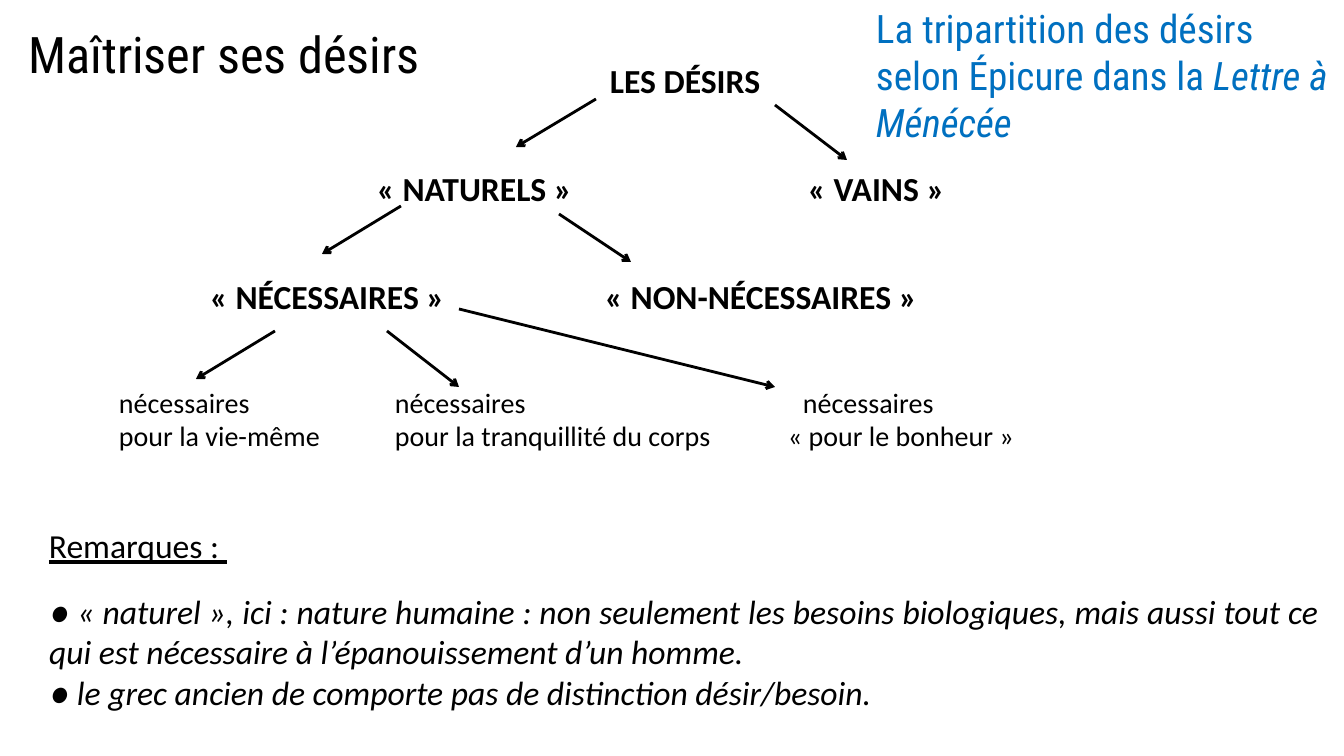
from lxml.etree import SubElement
from pptx import Presentation
from pptx.dml.color import RGBColor
from pptx.enum.shapes import MSO_CONNECTOR
from pptx.enum.text import MSO_ANCHOR, MSO_AUTO_SIZE, PP_ALIGN
from pptx.oxml.ns import qn
from pptx.util import Emu, Pt

BLACK = RGBColor(0x00, 0x00, 0x00)
BLUE = RGBColor(0x00, 0x70, 0xC0)
BODY_FONT = "Calibri"
HEADING_FONT = "Roboto Condensed"
EMU_PER_PX = 914400 / 100.8

# text, left, top, width
CATEGORIES = [
    ("LES DÉSIRS", 610, 60, 170),
    ("« NATURELS »", 377, 168, 210),
    ("« VAINS »", 808, 168, 150),
    ("« NÉCESSAIRES »", 210, 276, 250),
    ("« NON-NÉCESSAIRES »", 605, 276, 330),
]
# purpose, left, width, indent of the first line
NEEDS = [
    ("pour la vie-même", 119, 220, 0),
    ("pour la tranquillité du corps", 395, 335, 0),
    ("« pour le bonheur »", 788, 240, 15),
]
# start x, start y, end x, end y
ARROWS = [
    (596, 99, 516, 147),
    (775, 105, 847, 160),
    (401, 206, 322, 254),
    (559, 214, 631, 262),
    (275, 331, 196, 379),
    (387, 331, 459, 387),
    (459, 309, 775, 387),
]
REMARKS = [
    "● « naturel », ici : nature humaine : non seulement les besoins biologiques, "
    "mais aussi tout ce qui est nécessaire à l’épanouissement d’un homme.",
    "● le grec ancien de comporte pas de distinction désir/besoin.",
]


def px(length):
    return Emu(round(length * EMU_PER_PX))


def place(shape, left, top, width, height):
    """Move a text shape and let its text start at the top left."""
    shape.left, shape.top = px(left), px(top)
    shape.width, shape.height = px(width), px(height)
    frame = shape.text_frame
    frame.word_wrap = True
    frame.auto_size = MSO_AUTO_SIZE.NONE
    frame.vertical_anchor = MSO_ANCHOR.TOP
    return frame


def add_text_frame(slide, left, top, width, height, inset=True):
    box = slide.shapes.add_textbox(0, 0, 0, 0)
    frame = place(box, left, top, width, height)
    if not inset:
        frame.margin_left = frame.margin_right = 0
        frame.margin_top = frame.margin_bottom = 0
    return frame


def add_run(paragraph, text, size, font=BODY_FONT, color=BLACK,
            bold=False, italic=False, underline=False):
    run = paragraph.add_run()
    run.text = text
    style = run.font
    style.name, style.size = font, Pt(size)
    style.bold, style.italic, style.underline = bold, italic, underline
    style.color.rgb = color


def add_category(slide, text, left, top, width):
    frame = add_text_frame(slide, left, top, width, 41, inset=False)
    add_run(frame.paragraphs[0], text, 24, bold=True)


def add_need(slide, purpose, left, width, indent):
    frame = add_text_frame(slide, left, 385, width, 68, inset=False)
    heading = frame.paragraphs[0]
    heading._p.get_or_add_pPr().set("indent", str(px(indent)))
    add_run(heading, "nécessaires", 20)
    add_run(frame.add_paragraph(), purpose, 20)


def add_arrow(slide, x1, y1, x2, y2):
    arrow = slide.shapes.add_connector(
        MSO_CONNECTOR.STRAIGHT, px(x1), px(y1), px(x2), px(y2))
    arrow.line.color.rgb = BLACK
    arrow.line.width = Pt(2)
    SubElement(arrow.line._get_or_add_ln(), qn("a:tailEnd"), type="arrow")
    SubElement(arrow._element.spPr, qn("a:effectLst"))


def fill_title(slide):
    frame = place(slide.shapes.title, 18, 18, 840, 72)
    title = frame.paragraphs[0]
    title.alignment = PP_ALIGN.LEFT
    add_run(title, "Maîtriser ses désirs", 36, HEADING_FONT)


def add_subject(slide):
    subject = add_text_frame(slide, 866, -1, 478, 150).paragraphs[0]
    add_run(subject, "La tripartition des désirs selon Épicure dans la ",
            28, HEADING_FONT, BLUE)
    add_run(subject, "Lettre à Ménécée", 28, HEADING_FONT, BLUE, italic=True)


def fill_remarks(slide):
    heading = add_text_frame(slide, 39, 520, 391, 50).paragraphs[0]
    add_run(heading, "Remarques : ", 24, underline=True)

    frame = place(slide.placeholders[1], 39, 586, 1290, 132)
    for index, text in enumerate(REMARKS):
        remark = frame.add_paragraph() if index else frame.paragraphs[0]
        remark.alignment = PP_ALIGN.JUSTIFY
        remark.space_before = Pt(0)
        properties = remark._p.get_or_add_pPr()
        properties.set("marL", "0")
        properties.set("indent", "0")
        SubElement(properties, qn("a:buNone"))
        add_run(remark, text, 24, italic=True)


def main():
    deck = Presentation()
    deck.slide_width, deck.slide_height = px(1344), px(756)
    slide = deck.slides.add_slide(deck.slide_layouts[1])

    fill_title(slide)
    add_subject(slide)
    for category in CATEGORIES:
        add_category(slide, *category)
    for need in NEEDS:
        add_need(slide, *need)
    for arrow in ARROWS:
        add_arrow(slide, *arrow)
    fill_remarks(slide)

    deck.save("out.pptx")


if __name__ == "__main__":
    main()
